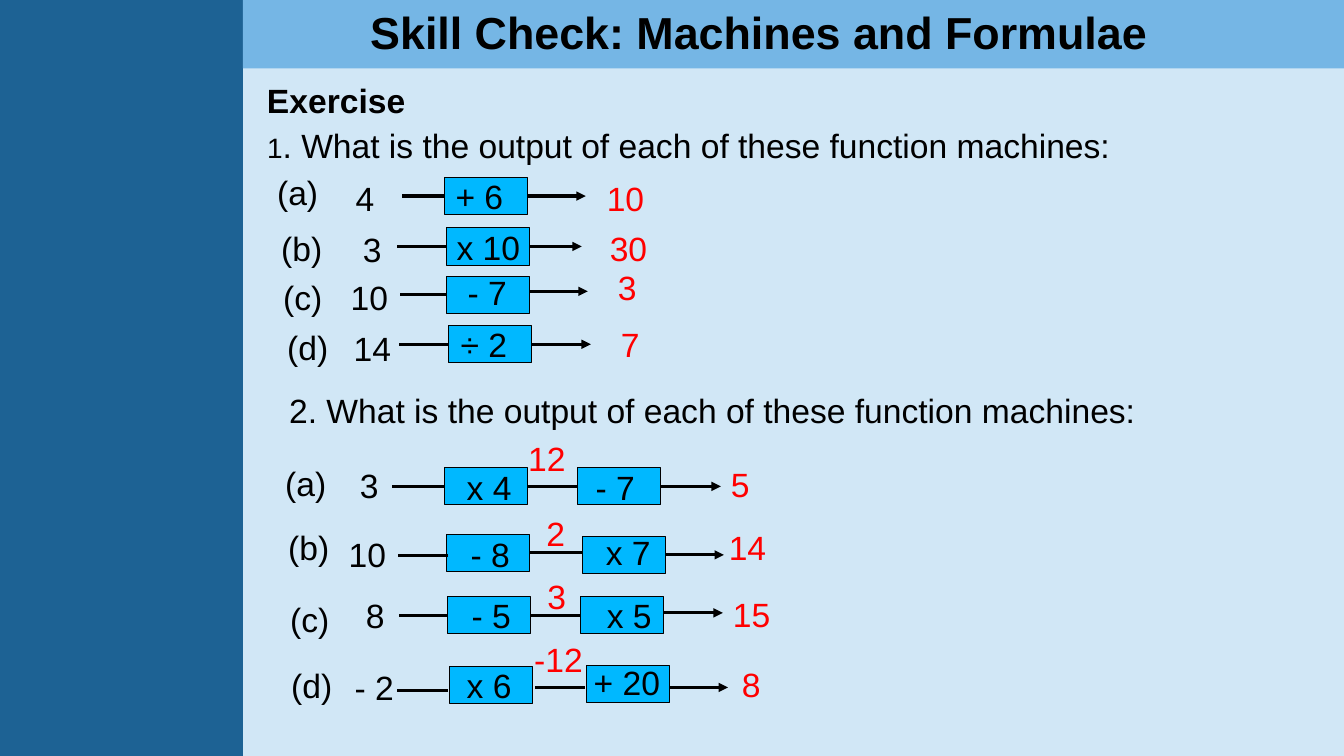
from lxml.etree import SubElement
from pptx import Presentation
from pptx.dml.color import RGBColor
from pptx.enum.shapes import MSO_CONNECTOR, MSO_SHAPE
from pptx.enum.text import MSO_ANCHOR, MSO_AUTO_SIZE, PP_ALIGN
from pptx.oxml.ns import qn
from pptx.util import Pt

PX = 9144  # 100 px to the inch
BLACK, RED, BOX_BLUE = "000000", "FF0000", "00B8FF"
BOX_WIDTH, BOX_HEIGHT, TEXT_HEIGHT = 82, 37, 50
JOIN_TOLERANCE = 2

# Each machine: boxes (left, top), lines (start, end, y) running from the input
# through the boxes to the output, black texts and red texts (text, left, top, width).
MACHINES = [
    ([(441, 176)], [(399, 448, 196), (524, 581, 194)],
     [("(a)", 265, 166, 62), ("4", 343, 172, 39), ("+ 6", 442, 170, 71)],
     [("10", 592, 172, 58)]),
    ([(443, 226)], [(394, 443, 246), (519, 577, 244)],
     [("(b)", 269, 221, 62), ("3", 350, 222, 44), ("x 10", 443, 220, 84)],
     [("30", 595, 221, 58)]),
    ([(443, 274)], [(397, 447, 292), (526, 583, 289)],
     [("(c)", 271, 270, 59), ("10", 338, 270, 57), ("- 7", 454, 265, 59)],
     [("3", 603, 260, 39)]),
    ([(445, 323)], [(396, 445, 340), (528, 586, 342)],
     [("(d)", 275, 319, 61), ("14", 341, 320, 58), ("÷ 2", 447, 316, 82)],
     [("7", 606, 316, 39)]),
    ([(441, 464), (573, 464)], [(389, 439, 482), (526, 575, 481), (657, 715, 481)],
     [("(a)", 273, 454, 61), ("3", 347, 456, 39), ("x 4", 453, 458, 65),
      ("- 7", 581, 458, 59)],
     [("12", 514, 430, 58), ("5", 715, 455, 39)]),
    ([(443, 530), (578, 532)], [(395, 444, 551), (529, 578, 548), (660, 718, 551)],
     [("(b)", 276, 518, 61), ("10", 336, 525, 57), ("- 8", 457, 525, 59),
      ("x 7", 591, 523, 65)],
     [("2", 532, 504, 37), ("14", 713, 518, 58)]),
    ([(444, 592), (576, 592)], [(396, 445, 612), (526, 575, 611), (659, 717, 608)],
     [("(c)", 278, 589, 59), ("8", 353, 585, 39), ("- 5", 458, 585, 59),
      ("x 5", 592, 585, 65)],
     [("3", 533, 566, 39), ("15", 717, 584, 58)]),
    ([(446, 661), (582, 660)], [(394, 444, 685), (531, 580, 682), (664, 722, 682)],
     [("(d)", 279, 655, 61), ("- 2", 342, 657, 60), ("x 6", 453, 655, 65),
      ("+ 20", 579, 652, 87)],
     [("-12", 520, 629, 69), ("8", 726, 654, 39)]),
]


def add_run(frame, text, size=24, color=BLACK, bold=False, wrap=False):
    """Append a formatted run to the first paragraph of a text frame."""
    frame.word_wrap = wrap
    frame.auto_size = MSO_AUTO_SIZE.SHAPE_TO_FIT_TEXT
    run = frame.paragraphs[0].add_run()
    run.text = text
    run.font.name = "Arial"
    run.font.size = Pt(size)
    run.font.bold = bold
    run.font.color.rgb = RGBColor.from_string(color)


def add_rectangle(left, top, width, height, fill, outlined=False):
    shape = slide.shapes.add_shape(
        MSO_SHAPE.RECTANGLE, left * PX, top * PX, width * PX, height * PX)
    shape.shadow.inherit = False
    shape.fill.solid()
    shape.fill.fore_color.rgb = RGBColor.from_string(fill)
    if outlined:
        shape.line.color.rgb = RGBColor.from_string(BLACK)
        shape.line.width = Pt(0.75)
    else:
        shape.line.fill.background()
    return shape


presentation = Presentation()
presentation.slide_width = 1333 * PX
presentation.slide_height = 750 * PX
slide = presentation.slides.add_slide(presentation.slide_layouts[5])
slide.background.fill.solid()
slide.background.fill.fore_color.rgb = RGBColor.from_string("D1E7F6")

add_rectangle(0, 0, 241, 750, "1D6294")
add_rectangle(241, 0, 1092, 68, "75B6E5")

title = slide.shapes.title
title._element.getparent().append(title._element)  # bring in front of the bands
title.left, title.top, title.width, title.height = 265 * PX, 0, 976 * PX, 64 * PX
title.text_frame.vertical_anchor = MSO_ANCHOR.TOP
title.text_frame.paragraphs[0].alignment = PP_ALIGN.CENTER
add_run(title.text_frame, "Skill Check: Machines and Formulae", size=32, bold=True, wrap=True)

QUESTION = ". What is the output of each of these function machines:"
headings = [
    (255, 74, 186, [("Exercise", 24, True)]),
    (255, 119, 955, [("1", 20, False), (QUESTION, 24, False)]),
    (277, 382, 870, [("2" + QUESTION, 24, False)]),
]
for left, top, width, runs in headings:
    heading = slide.shapes.add_textbox(left * PX, top * PX, width * PX, TEXT_HEIGHT * PX)
    for text, size, bold in runs:
        add_run(heading.text_frame, text, size=size, bold=bold, wrap=True)

for box_places, lines, black_texts, red_texts in MACHINES:
    boxes = [add_rectangle(left, top, BOX_WIDTH, BOX_HEIGHT, BOX_BLUE, outlined=True)
             for left, top in box_places]
    middles = [top + BOX_HEIGHT / 2 for left, top in box_places]

    for index, (start, end, y) in enumerate(lines):
        is_output = index == len(boxes)
        joins_source = index > 0 and abs(y - middles[index - 1]) <= JOIN_TOLERANCE
        joins_target = not is_output and abs(y - middles[index]) <= JOIN_TOLERANCE
        if joins_source:
            y = middles[index - 1]
        elif joins_target:
            y = middles[index]
        line = slide.shapes.add_connector(
            MSO_CONNECTOR.STRAIGHT, start * PX, int(y * PX), end * PX, int(y * PX))
        if joins_source:
            line.begin_connect(boxes[index - 1], 3)
        if joins_target:
            line.end_connect(boxes[index], 1)
        line.line.color.rgb = RGBColor.from_string(BLACK)
        line.line.width = Pt(2.25)
        if is_output:
            SubElement(line.line._get_or_add_ln(), qn("a:tailEnd"), type="triangle")
        SubElement(line._element.spPr, qn("a:effectLst"))

    for color, texts in ((BLACK, black_texts), (RED, red_texts)):
        for text, left, top, width in texts:
            label = slide.shapes.add_textbox(
                left * PX, top * PX, width * PX, TEXT_HEIGHT * PX)
            add_run(label.text_frame, text, color=color)

presentation.save("out.pptx")
